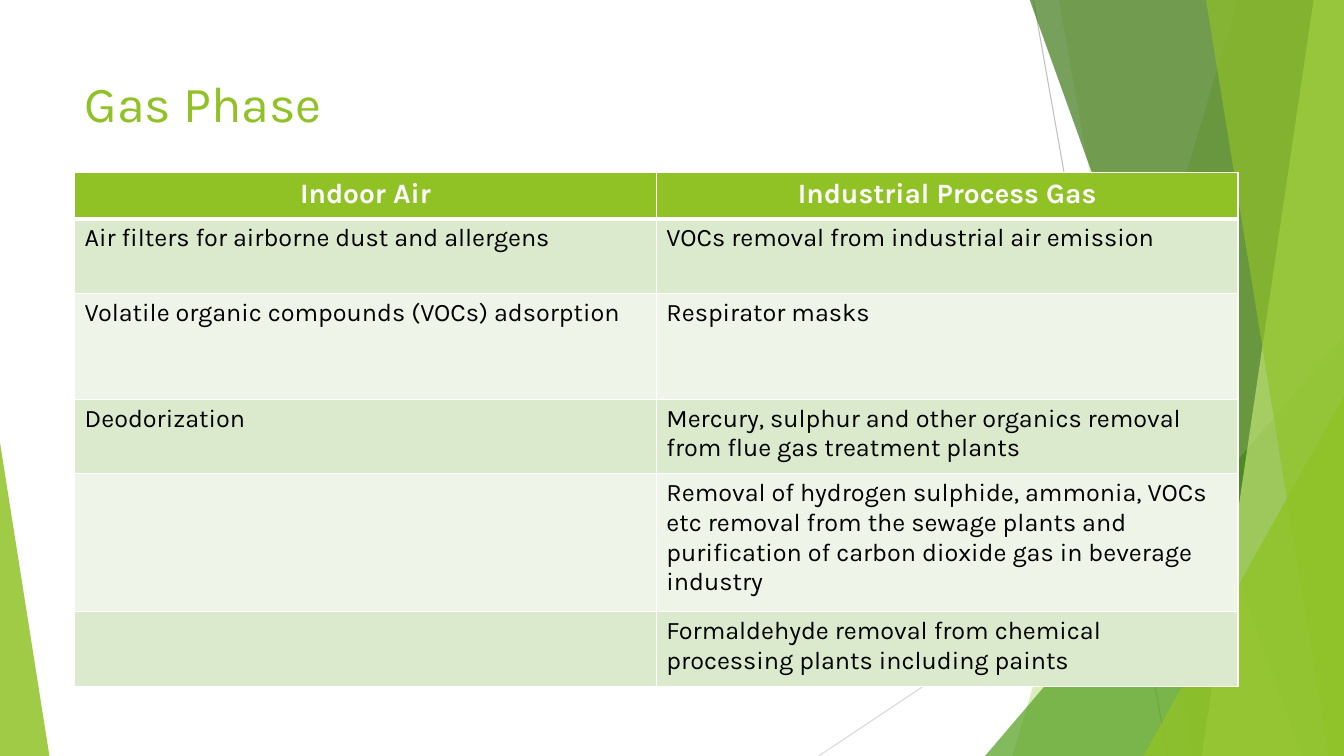
from dataclasses import dataclass

from lxml import etree
from pptx import Presentation
from pptx.dml.color import RGBColor
from pptx.enum.shapes import MSO_CONNECTOR, MSO_SHAPE
from pptx.enum.text import MSO_ANCHOR, PP_ALIGN
from pptx.oxml.ns import qn
from pptx.util import Pt

PX = 9144
STRAIGHT = MSO_CONNECTOR.STRAIGHT
TRIANGLE = MSO_SHAPE.ISOSCELES_TRIANGLE
TOP = MSO_ANCHOR.TOP
LEFT, CENTER = PP_ALIGN.LEFT, PP_ALIGN.CENTER
FONT = "Karla"
GREEN, WHITE, BLACK = "90C226", "FFFFFF", "000000"
BANDS = ("DBE9CD", "EEF4E8")


@dataclass
class Ray:
    start: tuple[int, int]
    end: tuple[int, int]
    color: str


@dataclass
class Facet:
    top_x: int
    bottom_x: int
    color: str
    alpha: int


@dataclass
class Corner:
    box: tuple[int, int, int, int]
    apex: int
    color: str
    alpha: int


RAYS = [
    Ray((1025, 0), (1158, 750), "BFBFBF"),
    Ray((1333, 403), (812, 750), "D9D9D9"),
]
DECOR = [
    Facet(1228, 1004, GREEN, 30),
    Facet(1050, 1183, GREEN, 20),
    Corner((977, 333, 356, 417), 1, "54A021", 72),
    Facet(1021, 1291, "3F7819", 70),
    Facet(1303, 1192, "C0E474", 70),
    Facet(1196, 1318, GREEN, 65),
    Corner((1134, 393, 199, 357), 1, GREEN, 80),
    Corner((0, 439, 49, 311), 0, GREEN, 85),
]
COLUMN_WIDTH = 577
ROW_HEIGHTS = (46, 74, 105, 74, 137, 74)
ROWS = [
    ("Indoor Air", "Industrial Process Gas"),
    ("Air filters for airborne dust and allergens",
     "VOCs removal from industrial air emission"),
    ("Volatile organic compounds (VOCs) adsorption", "Respirator masks"),
    ("Deodorization",
     "Mercury, sulphur and other organics removal from flue gas treatment plants"),
    ("", "Removal of hydrogen sulphide, ammonia, VOCs etc removal from the sewage "
         "plants and purification of carbon dioxide gas in beverage industry"),
    ("", "Formaldehyde removal from chemical processing plants including paints"),
]
TITLE_FORMAT = {"name": FONT, "size": Pt(36), "bold": False}
HEAD_FORMAT = {"name": FONT, "size": Pt(20), "bold": True}
BODY_FORMAT = {"name": FONT, "size": Pt(18), "bold": False}


def rgb(color: str) -> RGBColor:
    return RGBColor.from_string(color)


def px(*lengths: int) -> list[int]:
    return [length * PX for length in lengths]


def write(tf, text: str, font: dict, color: str, align) -> None:
    p = tf.paragraphs[0]
    p.alignment = align
    if not text:
        p.font.size = font["size"]
        return
    r = p.add_run()
    r.text = text
    for name, value in font.items():
        setattr(r.font, name, value)
    r.font.color.rgb = rgb(color)


def draw_ray(shapes, ray: Ray) -> None:
    line = shapes.add_connector(STRAIGHT, *px(*ray.start, *ray.end))
    line.line.color.rgb = rgb(ray.color)
    line.line.width = Pt(0.75)
    etree.SubElement(line._element.spPr, qn("a:effectLst"))


def draw_decor(shapes, item: Facet | Corner) -> None:
    if isinstance(item, Facet):
        builder = shapes.build_freeform(item.top_x, -1, scale=PX)
        builder.add_line_segments([(1333, -1), (1333, 750), (item.bottom_x, 750)])
        sp = builder.convert_to_shape()
    else:
        sp = shapes.add_shape(TRIANGLE, *px(*item.box))
        sp.adjustments[0] = item.apex
    sp.shadow.inherit = False
    sp.line.fill.background()
    sp.fill.solid()
    sp.fill.fore_color.rgb = rgb(item.color)
    clr = sp._element.spPr.find(qn("a:solidFill")).find(qn("a:srgbClr"))
    etree.SubElement(clr, qn("a:alpha"), val=str(item.alpha * 1000))


def add_borders(cell, row: int) -> None:
    tc_pr = cell._tc.get_or_add_tcPr()
    widths = {"L": 1, "R": 1, "T": 3 if row == 1 else 1, "B": 3 if row == 0 else 1}
    for side, width in widths.items():
        ln = etree.SubElement(tc_pr, qn(f"a:ln{side}"), w=str(Pt(width)))
        fill = etree.SubElement(ln, qn("a:solidFill"))
        etree.SubElement(fill, qn("a:srgbClr"), val=WHITE)


def draw_table(shapes) -> None:
    box = px(74, 171, 2 * COLUMN_WIDTH, sum(ROW_HEIGHTS))
    table = shapes.add_table(len(ROWS), 2, *box).table
    for column in table.columns:
        column.width = COLUMN_WIDTH * PX
    for i, (texts, height) in enumerate(zip(ROWS, ROW_HEIGHTS)):
        table.rows[i].height = height * PX
        for j, text in enumerate(texts):
            cell = table.cell(i, j)
            add_borders(cell, i)
            cell.fill.solid()
            if i == 0:
                cell.fill.fore_color.rgb = rgb(GREEN)
                write(cell.text_frame, text, HEAD_FORMAT, WHITE, CENTER)
            else:
                cell.fill.fore_color.rgb = rgb(BANDS[(i - 1) % 2])
                write(cell.text_frame, text, BODY_FORMAT, BLACK, LEFT)


def main() -> None:
    prs = Presentation()
    prs.slide_width, prs.slide_height = px(1333, 750)
    s = prs.slides.add_slide(prs.slide_layouts[5])
    for ray in RAYS:
        draw_ray(s.shapes, ray)
    for item in DECOR:
        draw_decor(s.shapes, item)
    title = s.shapes.title
    title.left, title.top, title.width, title.height = px(74, 67, 940, 144)
    title.text_frame.vertical_anchor = TOP
    write(title.text_frame, "Gas Phase", TITLE_FORMAT, GREEN, LEFT)
    s.shapes._spTree.append(title._element)
    draw_table(s.shapes)
    prs.save("out.pptx")


if __name__ == "__main__":
    main()
